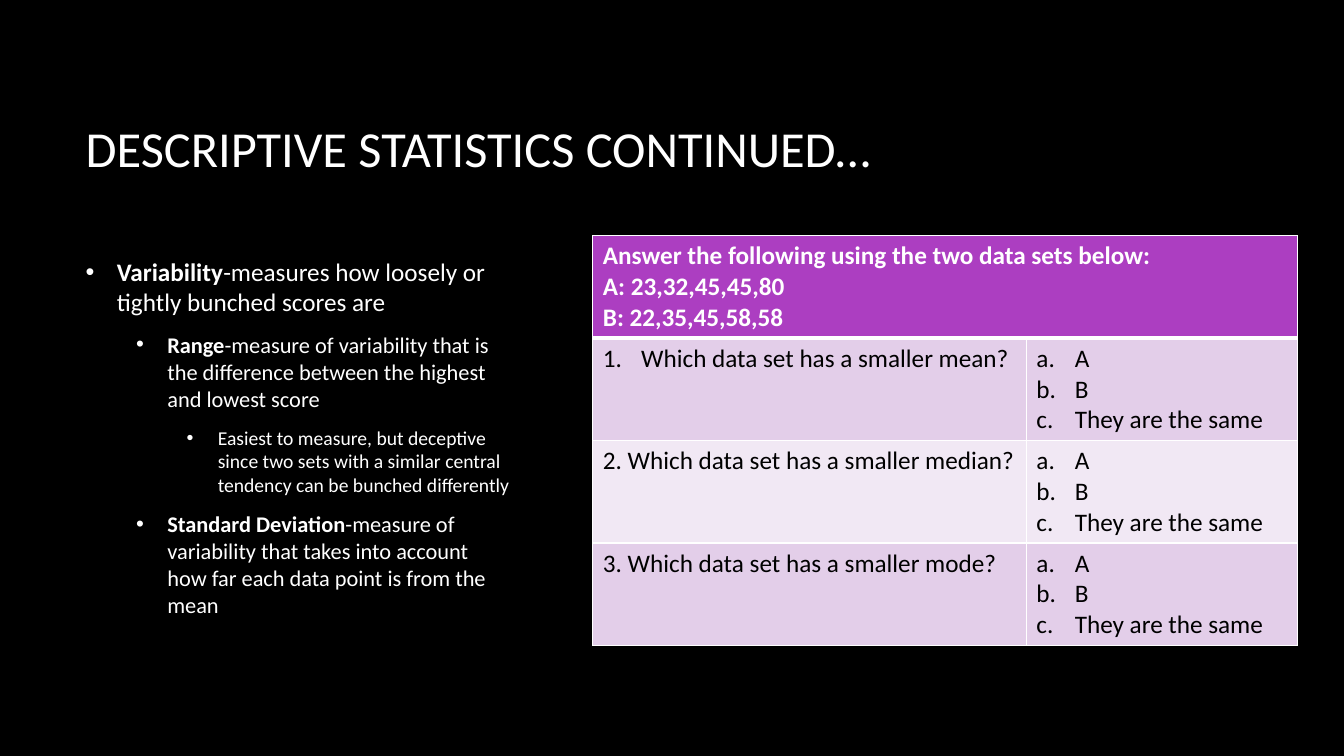
"""Build the descriptive statistics slide with a variability outline and a quiz table."""
from lxml import etree
from pptx import Presentation
from pptx import util as u
from pptx.dml.color import RGBColor
from pptx.enum import text
from pptx.oxml import ns

BLACK = RGBColor(0x00, 0x00, 0x00)
WHITE = RGBColor(0xFF, 0xFF, 0xFF)
PURPLE = RGBColor(0xAC, 0x3E, 0xC1)
LILAC = RGBColor(0xE3, 0xCE, 0xE9)
PALE_LILAC = RGBColor(0xF1, 0xE8, 0xF4)


def add_bullet(paragraph, indent, hanging, tag, **attributes):
    properties = paragraph._p.get_or_add_pPr()
    properties.set("marL", str(u.Inches(indent)))
    properties.set("indent", str(-u.Inches(hanging)))
    if tag == "a:buChar":
        etree.SubElement(properties, ns.qn("a:buFont"), typeface="Arial")
    etree.SubElement(properties, ns.qn(tag), **attributes)


def add_run(paragraph, words, size, color, bold=False):
    run = paragraph.add_run()
    run.text = words
    font_format = {"name": "Calibri", "size": u.Pt(size), "bold": bold}
    for attribute, value in font_format.items():
        setattr(run.font, attribute, value)
    run.font.color.rgb = color


presentation = Presentation()
presentation.slide_width = u.Inches(13.33)
presentation.slide_height = u.Inches(7.5)
slide = presentation.slides.add_slide(presentation.slide_layouts[1])
slide.background.fill.solid()
slide.background.fill.fore_color.rgb = BLACK

title, body = slide.placeholders
places = [(title, (0.75, 0.67, 11.08, 1.59)), (body, (0.75, 2.34, 4.42, 3.99))]
for shape, place in places:
    for attribute, length in zip(("left", "top", "width", "height"), place):
        setattr(shape, attribute, u.Inches(length))
    frame_format = {
        "vertical_anchor": text.MSO_ANCHOR.MIDDLE,
        "auto_size": text.MSO_AUTO_SIZE.NONE,
        "word_wrap": True,
    }
    for attribute, value in frame_format.items():
        setattr(shape.text_frame, attribute, value)

heading = title.text_frame.paragraphs[0]
heading.alignment = text.PP_ALIGN.LEFT
add_run(heading, "DESCRIPTIVE STATISTICS CONTINUED…", 36, WHITE)

outline = [
    (0, "Variability", "-measures how loosely or tightly bunched scores are"),
    (1, "Range", "-measure of variability that is the difference between the highest and lowest score"),
    (2, "", "Easiest to measure, but deceptive since two sets with a similar central "
            "tendency can be bunched differently"),
    (1, "Standard Deviation", "-measure of variability that takes into account how far "
                              "each data point is from the mean"),
]
for index, (level, term, meaning) in enumerate(outline):
    paragraph = body.text_frame.add_paragraph() if index else body.text_frame.paragraphs[0]
    add_bullet(paragraph, 0.31 + 0.5 * level, 0.31, "a:buChar", char="•")
    paragraph_format = {"level": level, "space_before": u.Pt(0), "space_after": u.Pt(10)}
    for attribute, value in paragraph_format.items():
        setattr(paragraph, attribute, value)
    size = 18 - 2 * level
    if term:
        add_run(paragraph, term, size, WHITE, True)
    add_run(paragraph, meaning, size, WHITE)

header = [
    "Answer the following using the two data sets below:",
    "A: 23,32,45,45,80",
    "B: 22,35,45,58,58",
]
answers = ["A", "B", "They are the same"]
quiz_rows = [
    (header, []),
    (["Which data set has a smaller mean?"], answers),
    (["2. Which data set has a smaller median?"], answers),
    (["3. Which data set has a smaller mode?"], answers),
]
row_fills = [PURPLE, LILAC, PALE_LILAC, LILAC]
numbering = {(1, 0): "arabicPeriod"} | {(row, 1): "alphaLcPeriod" for row in (1, 2, 3)}

table = slide.shapes.add_table(
    4, 2, u.Inches(5.88), u.Inches(2.34), u.Inches(6.99), u.Inches(4)).table
for column, width in zip(table.columns, (4.3, 2.69)):
    column.width = u.Inches(width)

for row, (contents, fill) in enumerate(zip(quiz_rows, row_fills)):
    for column, lines in enumerate(contents):
        cell = table.cell(row, column)
        cell.fill.solid()
        cell.fill.fore_color.rgb = fill
        for index, words in enumerate(lines):
            paragraph = cell.text_frame.add_paragraph() if index else cell.text_frame.paragraphs[0]
            if (row, column) in numbering:
                add_bullet(paragraph, 0.38, 0.38, "a:buAutoNum", type=numbering[row, column])
            add_run(paragraph, words, 18, BLACK if row else WHITE, row == 0)
        cell_properties = cell._tc.get_or_add_tcPr()
        for position, side in enumerate("LRTB"):
            thick = (row, side) in ((0, "B"), (1, "T"))
            border = etree.Element(ns.qn(f"a:ln{side}"), w=str(u.Pt(3 if thick else 1)))
            border_fill = etree.SubElement(border, ns.qn("a:solidFill"))
            etree.SubElement(border_fill, ns.qn("a:srgbClr"), val=str(WHITE))
            cell_properties.insert(position, border)
table.cell(0, 0).merge(table.cell(0, 1))

presentation.save("out.pptx")
